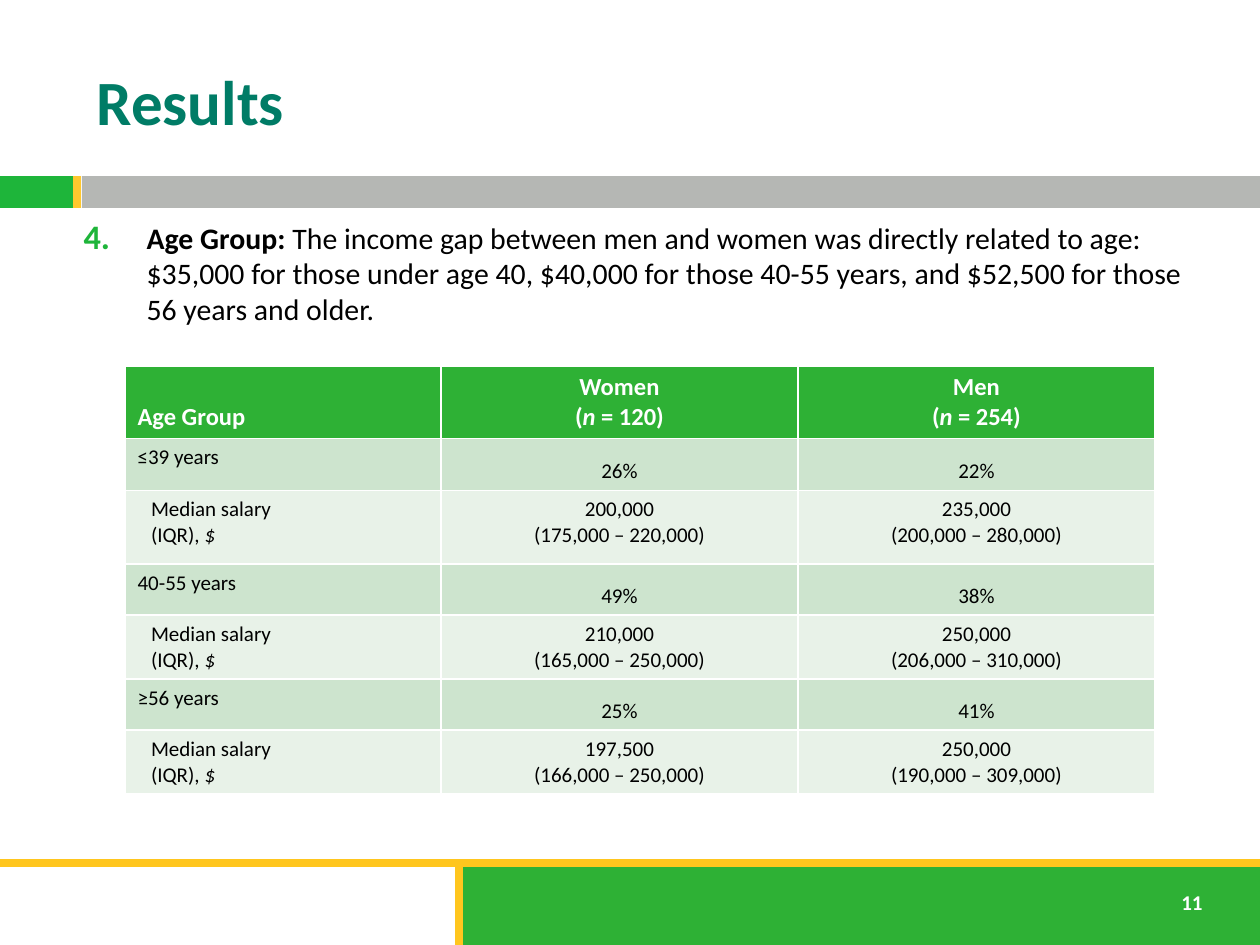
"""Build the results slide on income gap by age group."""
from lxml.etree import SubElement
from pptx import Presentation
from pptx.dml.color import RGBColor
from pptx.enum.shapes import MSO_CONNECTOR, MSO_SHAPE
from pptx.enum.text import MSO_ANCHOR, MSO_AUTO_SIZE, PP_ALIGN
from pptx.oxml.ns import qn
from pptx.util import Emu, Pt


def px(n):
    return Emu(round(n * 914400 / 126))


def rgb(value):
    return RGBColor.from_string(value)


prs = Presentation()
prs.slide_width, prs.slide_height = px(1260), px(945)
s = prs.slides.add_slide(prs.slide_layouts[1])
title, body = s.placeholders[0], s.placeholders[1]

bars = [
    (0, 176, 73, 32, "1EB53A"),
    (82, 176, 1178, 32, "B5B7B4"),
    (456, 862, 804, 83, "2EB135"),
]
for x, y, w, h, color in bars:
    sp = s.shapes.add_shape(MSO_SHAPE.RECTANGLE, px(x), px(y), px(w), px(h))
    sp.shadow.inherit = False
    sp.fill.solid()
    sp.fill.fore_color.rgb = rgb(color)
    sp.line.fill.background()

rules = [
    (0, 863, 1260, 863, "FFC61E"),
    (459, 864, 459, 945, "FFC61E"),
    (77, 176, 77, 208, "FFC82E"),
]
for x1, y1, x2, y2, color in rules:
    ln = s.shapes.add_connector(MSO_CONNECTOR.STRAIGHT, px(x1), px(y1), px(x2), px(y2))
    ln.line.color.rgb = rgb(color)
    ln.line.width = Pt(4.5)
    SubElement(ln._element.spPr, qn("a:effectLst"))

number = s.shapes.add_textbox(px(1169), px(883), px(50), px(38))
gap = "The income gap between men and women was directly related to age: $35,000 for those under age 40, $40,000 for those 40-55 years, and $52,500 for those 56 years and older."
boxes = [
    (title, (84, 32, 1124, 136), MSO_ANCHOR.MIDDLE, PP_ALIGN.LEFT,
     [("Results", {"size": Pt(36), "bold": True}, "007C66")]),
    (body, (71, 213, 1157, 171), MSO_ANCHOR.TOP, PP_ALIGN.LEFT,
     [("Age Group: ", {"size": Pt(17), "bold": True}, "000000"),
      (gap, {"size": Pt(17), "bold": False}, "000000")]),
    (number, (1169, 883, 50, 38), MSO_ANCHOR.TOP, PP_ALIGN.LEFT,
     [("11", {"size": Pt(12), "bold": True}, "FFFFFF")]),
]
for sp, place, anchor, align, runs in boxes:
    sp.left, sp.top, sp.width, sp.height = map(px, place)
    tf = sp.text_frame
    for name, value in {"word_wrap": sp is not number, "auto_size": MSO_AUTO_SIZE.NONE,
                        "vertical_anchor": anchor}.items():
        setattr(tf, name, value)
    p = tf.paragraphs[0]
    p.alignment = align
    p.space_before = Pt(0)
    for text, fmt, color in runs:
        r = p.add_run()
        r.text = text
        r.font.name = "Calibri"
        r.font.color.rgb = rgb(color)
        for name, value in fmt.items():
            setattr(r.font, name, value)

pPr = body.text_frame.paragraphs[0]._p.get_or_add_pPr()
pPr.set("marL", str(px(63)))
pPr.set("indent", str(px(-63)))
SubElement(SubElement(pPr, qn("a:buClr")), qn("a:srgbClr"), val="1EB53A")
SubElement(pPr, qn("a:buSzPct"), val="115000")
SubElement(pPr, qn("a:buFont"), typeface="+mj-lt")
SubElement(pPr, qn("a:buAutoNum"), type="arabicPeriod", startAt="4")

salary = "Median salary\n(IQR), *$*"
rows = [
    (71, "Age Group", "Women\n(*n* = 120)", "Men\n(*n* = 254)"),
    (52, "≤39 years", "26%", "22%"),
    (74, salary, "200,000\n(175,000 – 220,000)", "235,000\n(200,000 – 280,000)"),
    (51, "40-55 years", "49%", "38%"),
    (64, salary, "210,000\n(165,000 – 250,000)", "250,000\n(206,000 – 310,000)"),
    (51, "≥56 years", "25%", "41%"),
    (64, salary, "197,500\n(166,000 – 250,000)", "250,000\n(190,000 – 309,000)"),
]
widths = [316, 357, 357]
height = sum(row[0] for row in rows)
table = s.shapes.add_table(len(rows), 3, px(125), px(366), px(sum(widths)), px(height)).table
for col, w in zip(table.columns, widths):
    col.width = px(w)

for i, (h, *texts) in enumerate(rows):
    table.rows[i].height = px(h)
    header, group = i == 0, i % 2 == 1
    fill = "2EB135" if header else "CDE4CE" if group else "E8F2E8"
    for j, text in enumerate(texts):
        cell = table.cell(i, j)
        cell.fill.solid()
        cell.fill.fore_color.rgb = rgb(fill)
        low = (header and j == 0) or (group and j > 0)
        cell.vertical_anchor = MSO_ANCHOR.BOTTOM if low else MSO_ANCHOR.TOP
        if text == salary:
            cell.margin_left = px(26)
        tf = cell.text_frame
        for k, line in enumerate(text.split("\n")):
            p = tf.add_paragraph() if k else tf.paragraphs[0]
            p.alignment = PP_ALIGN.CENTER if j else PP_ALIGN.LEFT
            for m, part in enumerate(line.split("*")):
                if part:
                    r = p.add_run()
                    r.text = part
                    r.font.color.rgb = rgb("FFFFFF" if header else "000000")
                    for name, value in {"name": "Calibri", "size": Pt(14 if header else 12),
                                        "bold": header, "italic": m % 2 == 1}.items():
                        setattr(r.font, name, value)

prs.save("out.pptx")
